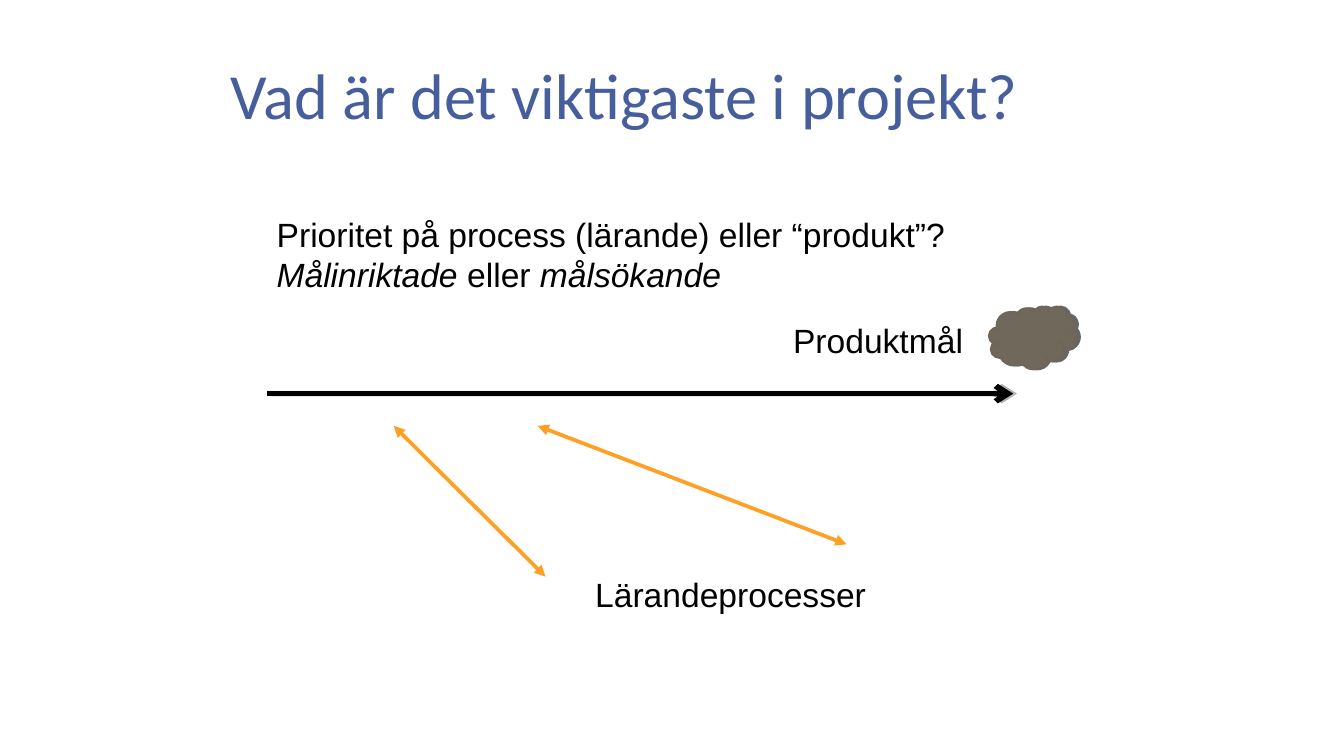
from typing import NamedTuple

from lxml import etree
from pptx import Presentation
from pptx import util as u
from pptx.dml.color import RGBColor
from pptx.enum import shapes, text
from pptx.oxml import ns

BLACK = RGBColor(0x00, 0x00, 0x00)
GREY = RGBColor(0x80, 0x80, 0x80)
BLUE = RGBColor(0x46, 0x5E, 0x9C)
ORANGE = RGBColor(0xFD, 0xA0, 0x23)
CLOUD_FILL = RGBColor(0x71, 0x68, 0x5C)
CLOUD_EDGE = RGBColor(0x6F, 0x66, 0x59)


class Run(NamedTuple):
    content: str
    italic: bool = False


class Label(NamedTuple):
    left: float
    top: float
    width: float
    height: float
    paragraphs: list[list[Run]]
    font: str = "Arial"
    size: float = 18
    color: RGBColor = BLACK
    anchor: text.MSO_ANCHOR = text.MSO_ANCHOR.TOP
    inset_x: float = 0.18
    inset_y: float = 0.1
    wrap: bool = False


class Arrow(NamedTuple):
    start: tuple[float, float]
    end: tuple[float, float]
    color: RGBColor
    weight: float
    heads: dict[str, str]
    shadow: RGBColor | None = None


LABELS = [
    Label(4.11, 0.58, 15.88, 2.39, [[Run("Vad är det viktigaste i projekt?")]],
          "Calibri", 34.5, BLUE, text.MSO_ANCHOR.MIDDLE, 0.25, 0.13, True),
    Label(14.81, 5.94, 3.63, 0.97, [[Run("Produktmål")]]),
    Label(11.07, 10.74, 5.54, 0.97, [[Run("Lärandeprocesser")]]),
    Label(5.05, 3.94, 13.13, 1.73, [
        [Run("Prioritet på process (lärande) eller “produkt”?")],
        [Run("Målinriktade ", True), Run("eller "), Run("målsökande", True)],
    ]),
]
BOTH_ENDS = {"headEnd": "triangle", "tailEnd": "triangle"}
ARROWS = [
    Arrow((5.05, 7.44), (19.15, 7.44), BLACK, 3, {"tailEnd": "arrow"}, GREY),
    Arrow((7.44, 8.05), (10.31, 10.9), ORANGE, 2, BOTH_ENDS),
    Arrow((10.16, 8.05), (16, 10.29), ORANGE, 2, BOTH_ENDS),
]


def set_shadow(shape, color: RGBColor | None) -> None:
    """Give a shape a hard shadow to its right, or none."""
    effects = etree.SubElement(shape._element.spPr, ns.qn("a:effectLst"))
    if color is not None:
        shadow = etree.SubElement(effects, ns.qn("a:outerShdw"), dist=str(u.Pt(2)), dir="0")
        shade = etree.SubElement(shadow, ns.qn("a:srgbClr"), val=str(color))
        etree.SubElement(shade, ns.qn("a:alpha"), val="60000")


def draw_label(slide, label: Label) -> None:
    """Draw a text box run by run."""
    box = slide.shapes.add_textbox(
        u.Cm(label.left), u.Cm(label.top), u.Cm(label.width), u.Cm(label.height))
    frame = box.text_frame
    frame.word_wrap = label.wrap
    frame.vertical_anchor = label.anchor
    frame.margin_left = frame.margin_right = u.Cm(label.inset_x)
    frame.margin_top = frame.margin_bottom = u.Cm(label.inset_y)
    if not label.wrap:
        frame.auto_size = text.MSO_AUTO_SIZE.SHAPE_TO_FIT_TEXT
    for index, runs in enumerate(label.paragraphs):
        paragraph = frame.add_paragraph() if index else frame.paragraphs[0]
        for item in runs:
            run = paragraph.add_run()
            run.text = item.content
            run.font.name = label.font
            run.font.size = u.Pt(label.size)
            run.font.italic = item.italic
            run.font.color.rgb = label.color


def draw_arrow(slide, arrow: Arrow) -> None:
    """Draw a straight connector with its arrowheads."""
    connector = slide.shapes.add_connector(
        shapes.MSO_CONNECTOR.STRAIGHT, *map(u.Cm, arrow.start + arrow.end))
    connector.line.color.rgb = arrow.color
    connector.line.width = u.Pt(arrow.weight)
    line = connector.line._get_or_add_ln()
    for end, kind in arrow.heads.items():
        etree.SubElement(line, ns.qn(f"a:{end}"), type=kind)
    set_shadow(connector, arrow.shadow)


def draw_cloud(slide) -> None:
    """Draw the cloud that stands for the product goal."""
    cloud = slide.shapes.add_shape(
        shapes.MSO_SHAPE.CLOUD, u.Cm(18.69), u.Cm(5.79), u.Cm(1.65), u.Cm(1.19))
    cloud.fill.solid()
    cloud.fill.fore_color.rgb = CLOUD_FILL
    cloud.line.color.rgb = CLOUD_EDGE
    cloud.line.width = u.Pt(1)
    set_shadow(cloud, BLACK)


def main() -> None:
    """Build and save the slide."""
    presentation = Presentation()
    presentation.slide_width = u.Cm(25.4)
    presentation.slide_height = u.Cm(14.29)
    slide = presentation.slides.add_slide(presentation.slide_layouts[6])
    for arrow in ARROWS:
        draw_arrow(slide, arrow)
    draw_cloud(slide)
    for label in LABELS:
        draw_label(slide, label)
    presentation.save("out.pptx")


if __name__ == "__main__":
    main()
